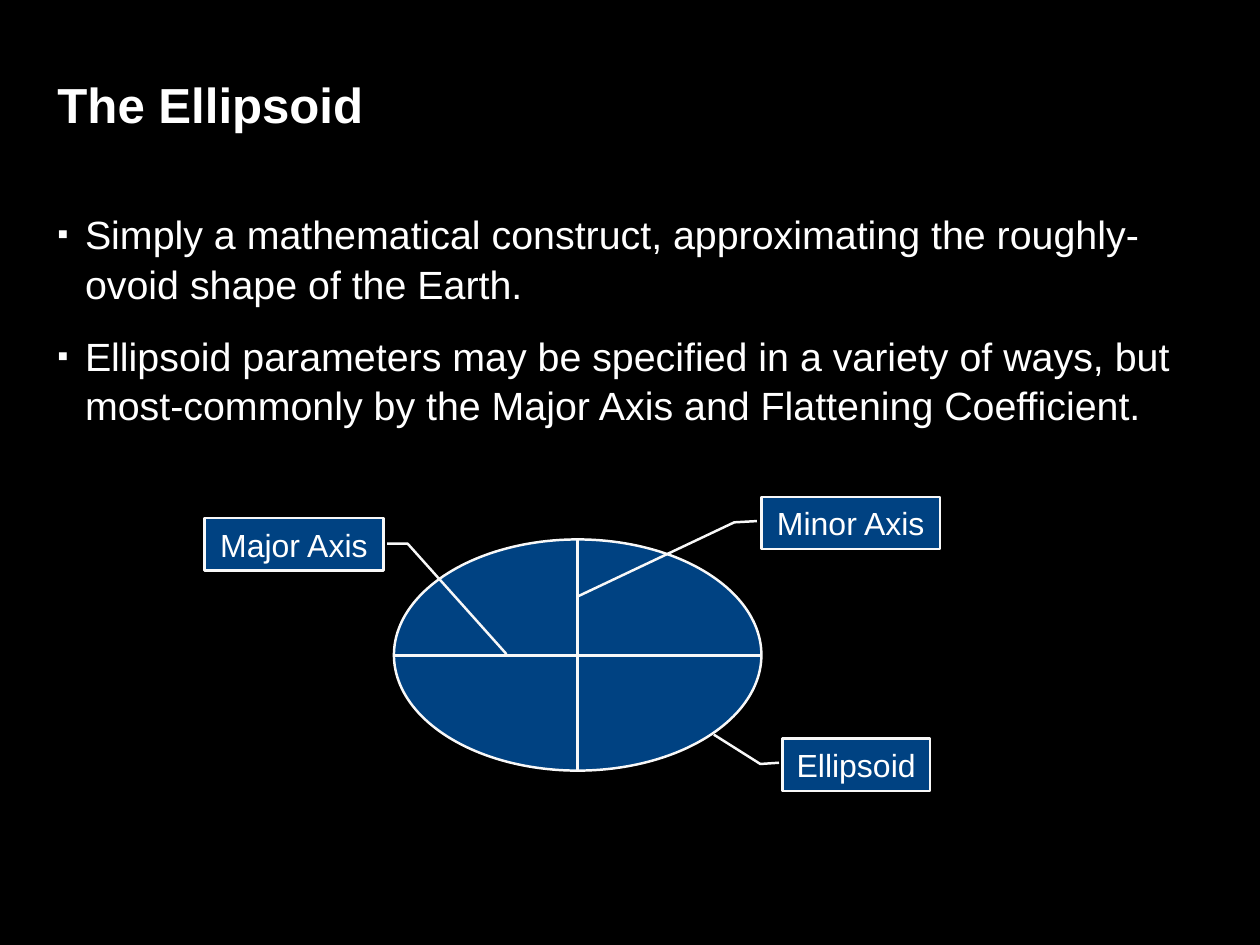
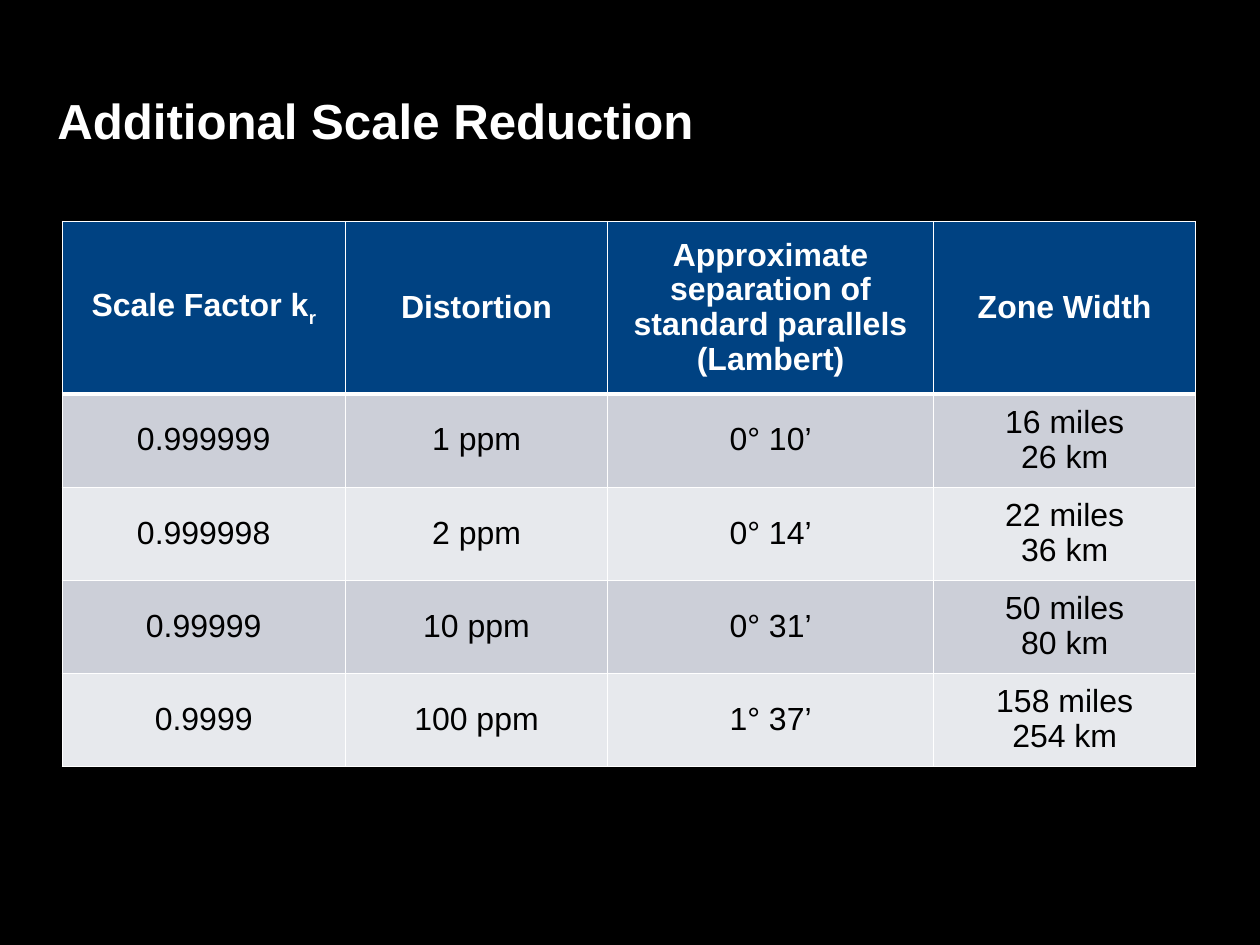
"""Build two slides on the ellipsoid and on scale reduction."""
from dataclasses import dataclass

from lxml import etree
from pptx import Presentation
from pptx.dml.color import RGBColor
from pptx.enum.shapes import MSO_CONNECTOR, MSO_SHAPE
from pptx.enum.text import MSO_ANCHOR, PP_ALIGN
from pptx.oxml.ns import qn
from pptx.util import Cm, Pt

STRAIGHT = MSO_CONNECTOR.STRAIGHT
ELLIPSE = MSO_SHAPE.OVAL
CALLOUT = MSO_SHAPE.LINE_CALLOUT_2
TOP, MIDDLE = MSO_ANCHOR.TOP, MSO_ANCHOR.MIDDLE
LEFT, CENTER = PP_ALIGN.LEFT, PP_ALIGN.CENTER


@dataclass(frozen=True)
class Theme:
    """Colours, type sizes and shared measures."""
    background: str = "000000"
    light_text: str = "FFFFFF"
    dark_text: str = "000000"
    accent: str = "004282"
    outline: str = "F8F8F8"
    grid: str = "FFFFFF"
    bands: tuple = ("CCCFD8", "E7E9ED")
    font: str = "Arial"
    title_size: int = 40
    body_size: int = 32
    label_size: int = 26
    margin: float = 1.65
    content_width: float = 32.66
    title_bottom: float = 4.95
    inset_x: float = 0.36
    inset_y: float = 0.18


def rgb(value):
    """Turn a hex string into a colour."""
    return RGBColor.from_string(value)


def child(parent, tag, **attributes):
    """Append a DrawingML element to a parent."""
    return etree.SubElement(parent, qn(tag), attributes)


class Deck:
    """Hold the theme, the presentation and the current slide."""

    def __init__(self, theme, width, height):
        """Start an empty presentation."""
        self.theme = theme
        self.prs = Presentation()
        self.prs.slide_width, self.prs.slide_height = Cm(width), Cm(height)
        self.slide = None

    def new_slide(self, title, title_top):
        """Add a slide with its background and title."""
        theme = self.theme
        self.slide = self.prs.slides.add_slide(self.prs.slide_layouts[6])
        fill = self.slide.background.fill
        fill.solid()
        fill.fore_color.rgb = rgb(theme.background)
        frame = self.text_box(title_top, theme.title_bottom - title_top, MIDDLE)
        frame.text = title
        self.style(frame, theme.title_size, bold=True)

    def text_box(self, top, height, anchor):
        """Add a text area of full content width without insets."""
        theme = self.theme
        frame = self.slide.shapes.add_textbox(
            Cm(theme.margin), Cm(top), Cm(theme.content_width), Cm(height)).text_frame
        frame.word_wrap = True
        frame.vertical_anchor = anchor
        frame.margin_left = frame.margin_right = 0
        frame.margin_top = frame.margin_bottom = 0
        return frame

    def style(self, frame, size, color=None, bold=False, align=LEFT, spacing=None):
        """Format every run of a text frame."""
        for paragraph in frame.paragraphs:
            paragraph.alignment = align
            paragraph.line_spacing = spacing
            for run in paragraph.runs:
                run.font.name = self.theme.font
                run.font.size = Pt(size)
                run.font.bold = bold
                run.font.color.rgb = rgb(color or self.theme.light_text)

    def bullets(self, points, top, height):
        """Add a list with square bullets."""
        frame = self.text_box(top, height, TOP)
        frame.text = "\n".join(points)
        indent = Cm(0.79)
        for number, paragraph in enumerate(frame.paragraphs):
            props = paragraph._p.get_or_add_pPr()
            props.set("marL", str(indent))
            props.set("indent", str(-indent))
            child(child(props, "a:buClr"), "a:srgbClr", val=self.theme.light_text)
            child(props, "a:buSzPct", val="80000")
            child(props, "a:buFont", typeface=self.theme.font)
            child(props, "a:buChar", char="▪")
            if number:
                paragraph.space_before = Pt(18)
        self.style(frame, self.theme.body_size, spacing=1.05)

    def shape(self, kind, left, top, width, height):
        """Add a filled and outlined preset shape."""
        shape = self.slide.shapes.add_shape(kind, Cm(left), Cm(top), Cm(width), Cm(height))
        shape.shadow.inherit = False
        shape.fill.solid()
        shape.fill.fore_color.rgb = rgb(self.theme.accent)
        shape.line.color.rgb = rgb(self.theme.outline)
        shape.line.width = Pt(2)
        return shape

    def callout(self, text, left, top, width, leader):
        """Add a label whose leader runs through (y, x) fractions of its size."""
        label = self.shape(CALLOUT, left, top, width, 1.5)
        for number, value in enumerate(leader):
            label.adjustments[number] = value
        frame = label.text_frame
        frame.text = text
        frame.word_wrap = False
        self.pad(frame)
        self.style(frame, self.theme.label_size, align=CENTER)

    def pad(self, holder):
        """Give a frame or cell the shared insets, centred vertically."""
        holder.margin_left = holder.margin_right = Cm(self.theme.inset_x)
        holder.margin_top = holder.margin_bottom = Cm(self.theme.inset_y)
        holder.vertical_anchor = MIDDLE

    def line(self, x1, y1, x2, y2):
        """Add a straight line."""
        line = self.slide.shapes.add_connector(STRAIGHT, Cm(x1), Cm(y1), Cm(x2), Cm(y2))
        line.line.color.rgb = rgb(self.theme.outline)
        line.line.width = Pt(2.5)
        child(line._element.spPr, "a:effectLst")

    def crossed_ellipse(self, left, top, width, height):
        """Add an ellipse with both of its axes."""
        self.shape(ELLIPSE, left, top, width, height)
        center_x, center_y = left + width / 2, top + height / 2
        self.line(left, center_y, left + width, center_y)
        self.line(center_x, top, center_x, top + height)

    def borders(self, cell, top, bottom):
        """Draw the four borders of a cell, widths in points."""
        props = cell._tc.get_or_add_tcPr()
        for side, width in (("L", 1), ("R", 1), ("T", top), ("B", bottom)):
            edge = child(props, f"a:ln{side}", w=str(Pt(width)))
            child(child(edge, "a:solidFill"), "a:srgbClr", val=self.theme.grid)

    def table(self, left, top, columns, header_height, row_height, rows):
        """Add a table with a header row and alternating bands."""
        theme = self.theme
        heights = [header_height] + [row_height] * (len(rows) - 1)
        table = self.slide.shapes.add_table(
            len(rows), len(columns), Cm(left), Cm(top),
            Cm(sum(columns)), Cm(sum(heights))).table
        for column, width in zip(table.columns, columns):
            column.width = Cm(width)
        for row, height in zip(table.rows, heights):
            row.height = Cm(height)
        for r, values in enumerate(rows):
            header = r == 0
            fill = theme.accent if header else theme.bands[(r - 1) % 2]
            color = theme.light_text if header else theme.dark_text
            for c, value in enumerate(values):
                cell = table.cell(r, c)
                text, _, subscript = value.partition("_")
                cell.text_frame.text = text
                if subscript:
                    run = cell.text_frame.paragraphs[0].add_run()
                    run.text = subscript
                    run._r.get_or_add_rPr().set("baseline", "-25000")
                self.pad(cell)
                self.borders(cell, 3 if r == 1 else 1, 3 if header else 1)
                cell.fill.solid()
                cell.fill.fore_color.rgb = rgb(fill)
                self.style(cell.text_frame, theme.label_size, color, header, CENTER, 0.97)


def ellipsoid_slide(deck):
    """Explain the ellipsoid with a labelled drawing."""
    deck.new_slide("The Ellipsoid", 1.02)
    deck.bullets([
        "Simply a mathematical construct, approximating the roughly-ovoid shape of the Earth.",
        "Ellipsoid parameters may be specified in a variety of ways, but most-commonly "
        "by the Major Axis and Flattening Coefficient.",
    ], 5.97, 18.62)
    deck.crossed_ellipse(11.3, 15.47, 10.54, 6.63)
    right_start = (0.463, -0.025, 0.487, -0.152)
    for label in (
        ("Major Axis", 5.87, 14.86, 5.13, (0.487, 1.02, 0.487, 1.135, 2.6, 1.688)),
        ("Minor Axis", 21.84, 14.25, 5.13, (*right_start, 1.9, -1.025)),
        ("Ellipsoid", 22.45, 21.18, 4.22, (*right_start, -0.075, -0.468)),
    ):
        deck.callout(*label)


def scale_slide(deck):
    """Tabulate scale factors against zone widths."""
    deck.new_slide("Additional Scale Reduction", 1.9)
    deck.table(1.78, 6.35, (8.13, 7.52, 9.35, 7.52), 4.95, 2.67, [
        ("Scale Factor k_r", "Distortion",
         "Approximate separation of standard parallels (Lambert)", "Zone Width"),
        ("0.999999", "1 ppm", "0° 10’", "16 miles\n26 km"),
        ("0.999998", "2 ppm", "0° 14’", "22 miles\n36 km"),
        ("0.99999", "10 ppm", "0° 31’", "50 miles\n80 km"),
        ("0.9999", "100 ppm", "1° 37’", "158 miles\n254 km"),
    ])


def main():
    """Build and save the presentation."""
    deck = Deck(Theme(), 36.14, 27.1)
    ellipsoid_slide(deck)
    scale_slide(deck)
    deck.prs.save("out.pptx")


if __name__ == "__main__":
    main()
